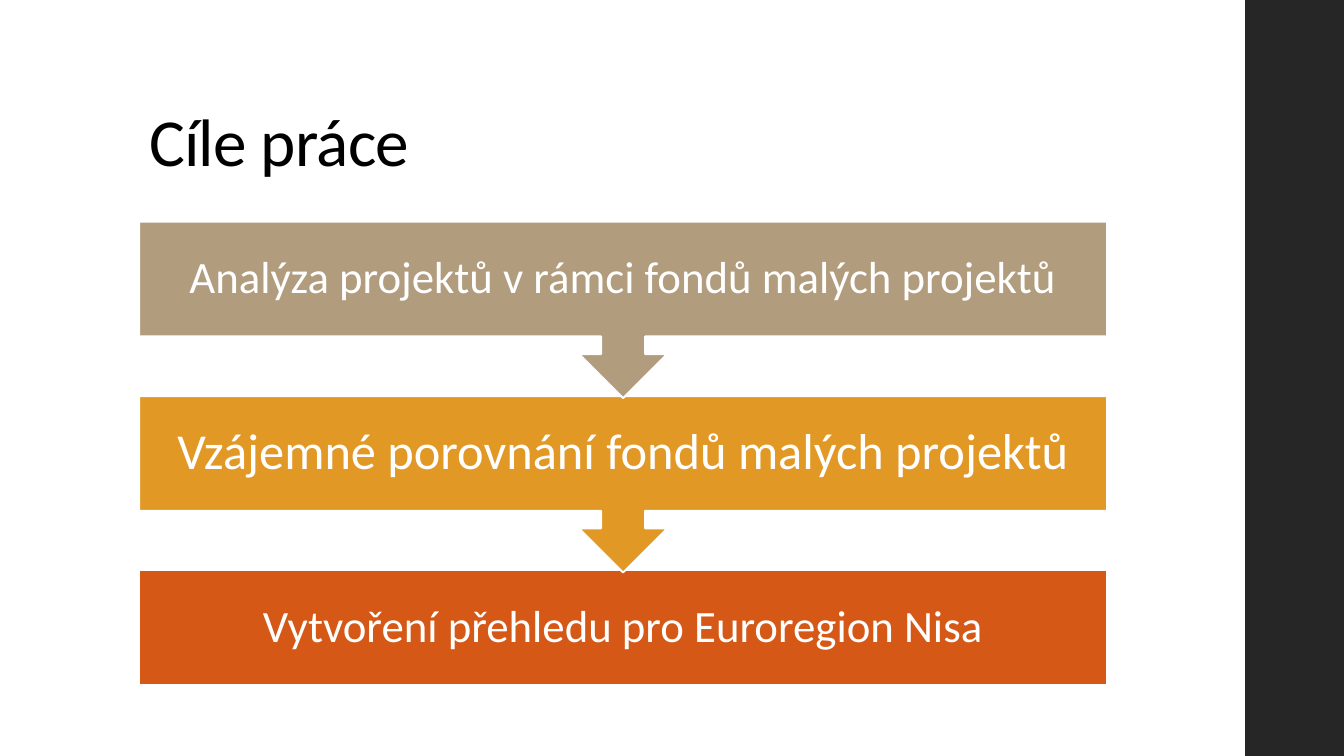
import pptx
import pptx.dml.color
import pptx.enum.shapes
import pptx.enum.text
import pptx.util

Inches = pptx.util.Inches
Shapes = pptx.enum.shapes.MSO_SHAPE
Anchor = pptx.enum.text.MSO_ANCHOR
Align = pptx.enum.text.PP_ALIGN

COLORS = {
    "black": "000000",
    "white": "FFFFFF",
    "sidebar": "262626",
    "tan": "B19C7D",
    "amber": "E19825",
    "orange": "D55816",
}
GOALS = [
    ("Analýza projektů v rámci fondů malých projektů", "tan", 32, 0.25),
    ("Vzájemné porovnání fondů malých projektů", "amber", 36, 0.28),
    ("Vytvoření přehledu pro Euroregion Nisa", "orange", 32, 0.25),
]


def color(name):
    """Return the named colour."""
    return pptx.dml.color.RGBColor.from_string(COLORS[name])


def add_block(slide, kind, box, fill, line=None):
    """Add a filled shape, outlined when a line colour is given."""
    shape = slide.shapes.add_shape(kind, *map(Inches, box))
    shape.shadow.inherit = False
    shape.fill.solid()
    shape.fill.fore_color.rgb = color(fill)
    if line:
        shape.line.color.rgb = color(line)
        shape.line.width = pptx.util.Pt(1.35)
    else:
        shape.line.fill.background()
    return shape


def add_label(slide, box, text, size, ink, anchor, align, insets):
    """Add a one-paragraph text box and return its run."""
    frame = slide.shapes.add_textbox(*map(Inches, box)).text_frame
    frame.word_wrap = True
    frame.vertical_anchor = anchor
    frame.margin_left = frame.margin_right = Inches(insets[0])
    frame.margin_top = frame.margin_bottom = Inches(insets[1])
    paragraph = frame.paragraphs[0]
    paragraph.alignment = align
    paragraph.line_spacing = 0.9
    run = paragraph.add_run()
    run.text = text
    run.font.name = "Calibri"
    run.font.size = pptx.util.Pt(size)
    run.font.color.rgb = color(ink)
    return run


def add_title(slide, box, text):
    """Add the slide title with slightly tightened letters."""
    run = add_label(slide, box, text, 48, "black", Anchor.BOTTOM, Align.LEFT, (0.1, 0.05))
    run.font._element.set("spc", "-50")


def add_goal_flow(slide, box):
    """Stack the goals downwards, each pointing to the next one."""
    left, top, width, height = box
    bar_height, callout_height = 1.14, 1.75
    step = (height - bar_height) / (len(GOALS) - 1)
    last = len(GOALS) - 1
    for index, (text, fill, size, inset) in reversed(list(enumerate(GOALS))):
        row_top = top + index * step
        bar = (left, row_top, width, bar_height)
        if index == last:
            add_block(slide, Shapes.RECTANGLE, bar, fill, "white")
        else:
            callout = (left, row_top, width, callout_height)
            shape = add_block(slide, Shapes.UP_ARROW_CALLOUT, callout, fill, "white")
            shape.rotation = 180
        add_label(slide, bar, text, size, "white", Anchor.MIDDLE, Align.CENTER, (inset, inset))


def main():
    """Build and save the slide."""
    presentation = pptx.Presentation()
    presentation.slide_width = Inches(13.33)
    presentation.slide_height = Inches(7.5)
    slide = presentation.slides.add_slide(presentation.slide_layouts[6])
    add_block(slide, Shapes.RECTANGLE, (12.35, 0, 0.98, 7.5), "sidebar")
    add_title(slide, (1.38, 0.4, 10.6, 1.45), "Cíle práce")
    add_goal_flow(slide, (1.38, 2.2, 9.6, 4.6))
    presentation.save("out.pptx")


if __name__ == "__main__":
    main()
